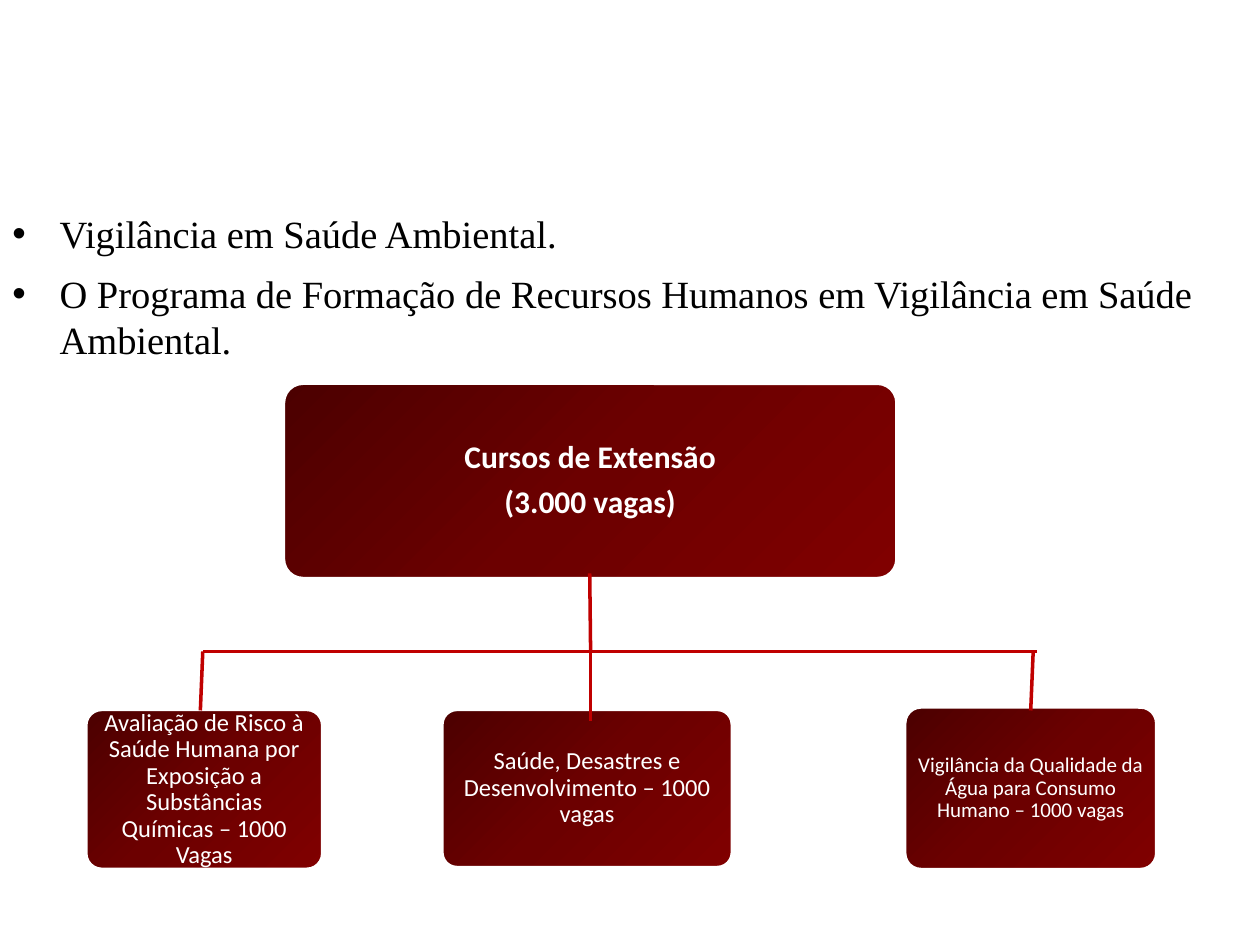
from copy import deepcopy

from lxml.etree import SubElement
from pptx import Presentation
from pptx.dml.color import RGBColor
from pptx.enum.shapes import MSO_CONNECTOR as CONN, MSO_SHAPE as SHAPE
from pptx.enum.text import MSO_ANCHOR as ANCHOR, PP_ALIGN as ALIGN
from pptx.oxml.ns import qn
from pptx.util import Pt

COLORS = {"text": "000000", "white": "FFFFFF", "line": "C00000",
          "dark": "4C0000", "middle": "6C0000", "light": "800000"}
BULLETS = [
    ("Vigilância em Saúde Ambiental.", (0, 116.6, 720, 33.8)),
    ("O Programa de Formação de Recursos Humanos em Vigilância em Saúde Ambiental.",
     (0, 150.5, 720, 60.5)),
]
ROOT = (["Cursos de Extensão", "(3.000 vagas)"], (162, 219, 350.6, 111.6), 18, 2, True)
COURSES = [
    (["Avaliação de Risco à Saúde Humana por Exposição a Substâncias Químicas – 1000 Vagas"],
     (49, 405.4, 135.4, 91.4), 14, 2, False),
    (["Saúde, Desastres e Desenvolvimento – 1000 vagas"],
     (252, 404.9, 167, 91.4), 14, 3, False),
    (["Vigilância da Qualidade da Água para Consumo Humano – 1000 vagas"],
     (517, 404, 144, 92.9), 12, 2, False),
]
BAR_Y = 372.2
LINKS = [
    (337, 327.6, 337.5, BAR_Y),
    (592.6, BAR_Y, 115.9, BAR_Y),
    (589, 406, 590.4, BAR_Y),
    (114.5, 406, 115.9, BAR_Y),
    (337.5, 411.8, 337.5, 360.7),
]


def rgb(name):
    """Return the named colour."""
    return RGBColor.from_string(COLORS[name])


def set_font(font, color, **values):
    """Apply a colour and a set of font values."""
    font.color.rgb = rgb(color)
    for name, value in values.items():
        setattr(font, name, value)


def add_bullet(s, text, box):
    """Place one bulleted statement in its box."""
    tf = s.shapes.add_textbox(*map(Pt, box)).text_frame
    tf.word_wrap = True
    tf.vertical_anchor = ANCHOR.MIDDLE
    p = tf.paragraphs[0]
    pPr = p._p.get_or_add_pPr()
    pPr.set("marL", str(Pt(27)))
    pPr.set("indent", str(-Pt(27)))
    SubElement(pPr, qn("a:buFont")).set("typeface", "Arial")
    SubElement(pPr, qn("a:buChar")).set("char", "•")
    r = p.add_run()
    r.text = text
    set_font(r.font, "text", name="Times New Roman", size=Pt(22))


def fill_gradient(fill):
    """Shade diagonally from dark to light in three stops."""
    fill.gradient()
    fill.gradient_angle = 315
    first = fill.gradient_stops[0]._gs
    first.addnext(deepcopy(first))
    for stop, position, name in zip(fill.gradient_stops, (0, 0.5, 1), ("dark", "middle", "light")):
        stop.position = position
        stop.color.rgb = rgb(name)


def add_node(s, lines, box, size, border, bold):
    """Place one rounded chart node with centred text."""
    sp = s.shapes.add_shape(SHAPE.ROUNDED_RECTANGLE, *map(Pt, box))
    sp.adjustments[0] = 0.1
    sp.shadow.inherit = False
    fill_gradient(sp.fill)
    sp.line.color.rgb = rgb("white")
    sp.line.width = Pt(border)
    tf = sp.text_frame
    tf.word_wrap = True
    tf.vertical_anchor = ANCHOR.MIDDLE
    for side in ("left", "right", "top", "bottom"):
        setattr(tf, f"margin_{side}", Pt(size * 0.3))
    for i, line in enumerate(lines):
        p = tf.add_paragraph() if i else tf.paragraphs[0]
        layout = {"alignment": ALIGN.CENTER, "line_spacing": 0.9, "space_after": Pt(size * 0.35)}
        for name, value in layout.items():
            setattr(p, name, value)
        r = p.add_run()
        r.text = line
        set_font(r.font, "white", name="Calibri", size=Pt(size), bold=bold)


def add_link(s, ends):
    """Draw one straight line between chart nodes."""
    cx = s.shapes.add_connector(CONN.STRAIGHT, *map(Pt, ends))
    cx.line.color.rgb = rgb("line")
    cx.line.width = Pt(2)
    SubElement(cx._element.spPr, qn("a:effectLst"))


def build():
    """Build the slide and save it."""
    prs = Presentation()
    prs.slide_width, prs.slide_height = Pt(720), Pt(540)
    s = prs.slides.add_slide(prs.slide_layouts[6])
    for text, box in BULLETS:
        add_bullet(s, text, box)
    for node in [ROOT, *COURSES]:
        add_node(s, *node)
    for ends in LINKS:
        add_link(s, ends)
    prs.save("out.pptx")


if __name__ == "__main__":
    build()
